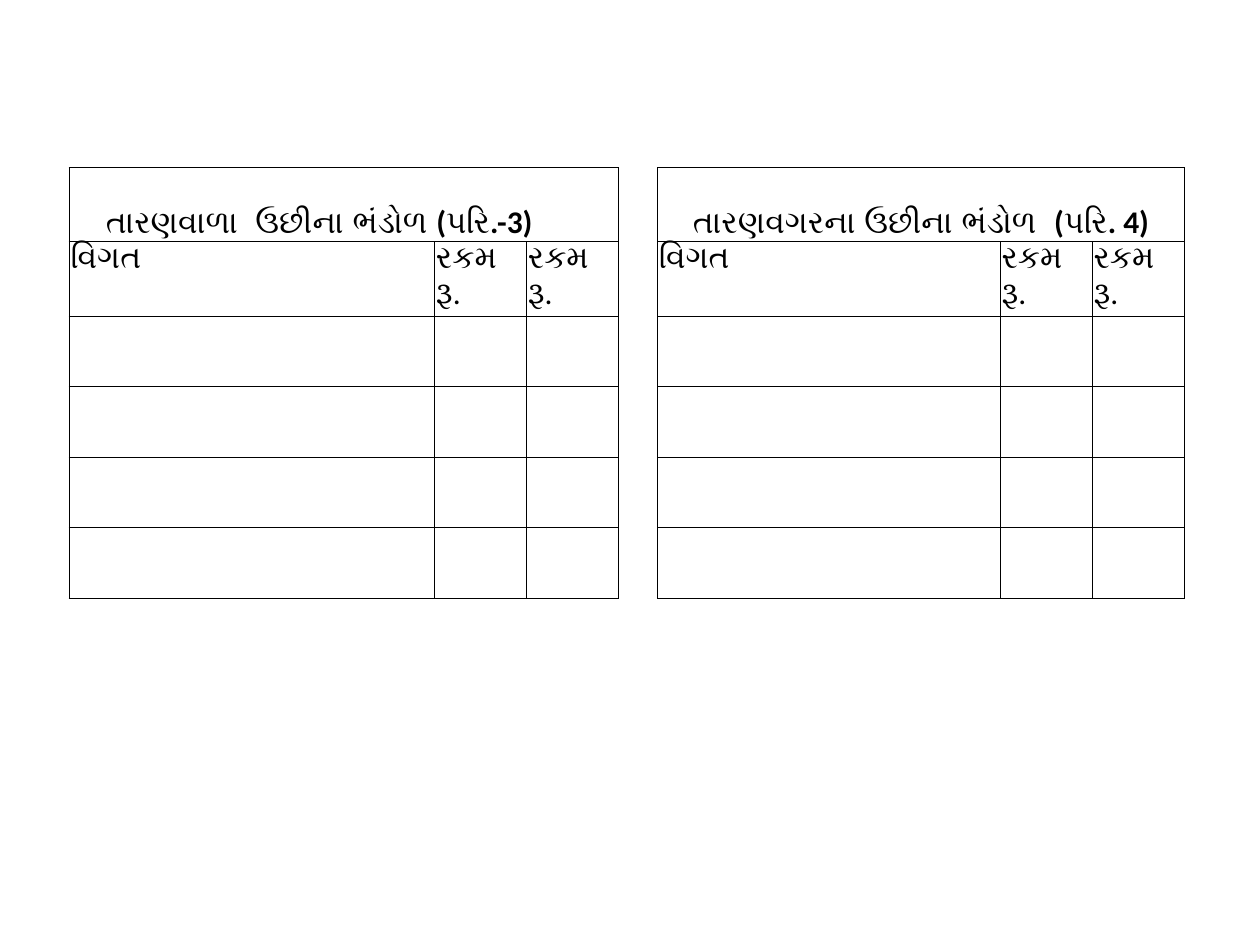
from dataclasses import dataclass
from lxml import etree
from pptx import Presentation, util as u
from pptx.dml.color import RGBColor
from pptx.enum import text
from pptx.oxml.ns import qn


@dataclass(frozen=True)
class Theme:
    """Hold the colours, type and line sizes of the slide."""
    ink: str = "000000"
    font: str = "Calibri"
    size: int = 18
    thin: float = 0.5
    thick: float = 1
    inset: float = 0.01
    indent: float = 0.29


LOOK = Theme()
HEADS = ("વિગત", "રકમ રૂ.", "રકમ રૂ.")
LEFT = "તારણવાળા  ઉછીના ભંડોળ (પરિ.-3)"
RIGHT = "તારણવગરના ઉછીના ભંડોળ  (પરિ. 4)"
COLS = (2.9, 0.73, 0.73, 0.31, 2.72, 0.73, 0.73)
ROWS = (0.59,) * 2 + (0.56,) * 4
GAP = 3


def rule(cell, side, width):
    """Draw one cell edge, or clear it when the width is zero."""
    line = etree.SubElement(cell._tc.get_or_add_tcPr(), qn(f"a:ln{side}"))
    if not width:
        etree.SubElement(line, qn("a:noFill"))
        return
    line.set("w", str(u.Pt(width)))
    fill = etree.SubElement(line, qn("a:solidFill"))
    etree.SubElement(fill, qn("a:srgbClr")).set("val", LOOK.ink)


def frame(cell, col):
    """Give a cell its insets, edges and clear fill."""
    flat = 0 if col == GAP else LOOK.thin
    edges = {"L": LOOK.thin if col else LOOK.thick,
             "R": LOOK.thick if col == len(COLS) - 1 else LOOK.thin,
             "T": flat, "B": flat}
    for side, width in edges.items():
        rule(cell, side, width)
    cell.fill.background()
    pads = {"left": LOOK.inset, "top": LOOK.inset, "right": LOOK.inset, "bottom": 0}
    for side, pad in pads.items():
        setattr(cell, f"margin_{side}", u.Inches(pad))


def write(cell, words, bold=False):
    """Put a line of themed text in a cell."""
    run = cell.text_frame.paragraphs[0].add_run()
    run.text = words
    style = {"name": LOOK.font, "size": u.Pt(LOOK.size), "bold": bold}
    for key, val in style.items():
        setattr(run.font, key, val)
    run.font.color.rgb = RGBColor.from_string(LOOK.ink)


def ledger(grid, col, title):
    """Fill one three-column half of the table, starting at a column."""
    top = grid.cell(0, col)
    top.merge(grid.cell(0, col + len(HEADS) - 1))
    top.vertical_anchor = text.MSO_ANCHOR.BOTTOM
    write(top, title, True)
    for step, head in enumerate(HEADS):
        write(grid.cell(1, col + step), head)
    return top


def sheet(slide, left, top):
    """Place the two ledgers in one table at the given corner."""
    size = [u.Inches(n) for n in (left, top, sum(COLS), sum(ROWS))]
    grid = slide.shapes.add_table(len(ROWS), len(COLS), *size).table
    grid.first_row = grid.horz_banding = False
    for col, wide in zip(grid.columns, COLS):
        col.width = u.Inches(wide)
    for row, high in zip(grid.rows, ROWS):
        row.height = u.Inches(high)
        for col, cell in enumerate(row.cells):
            frame(cell, col)
    ledger(grid, 0, LEFT).margin_left = u.Inches(LOOK.indent)
    last = ledger(grid, GAP + 1, RIGHT)
    last.text_frame.paragraphs[0].alignment = text.PP_ALIGN.CENTER
    rule_end(last)


def rule_end(cell):
    """Thicken the outer right edge of a merged title cell."""
    cell._tc.tcPr.find(qn("a:lnR")).set("w", str(u.Pt(LOOK.thick)))


def main():
    """Build and save the slide."""
    deck = Presentation()
    deck.slide_width, deck.slide_height = u.Inches(10), u.Inches(7.5)
    slide = deck.slides.add_slide(deck.slide_layouts[6])
    sheet(slide, 0.55, 1.33)
    deck.save("out.pptx")


if __name__ == "__main__":
    main()
